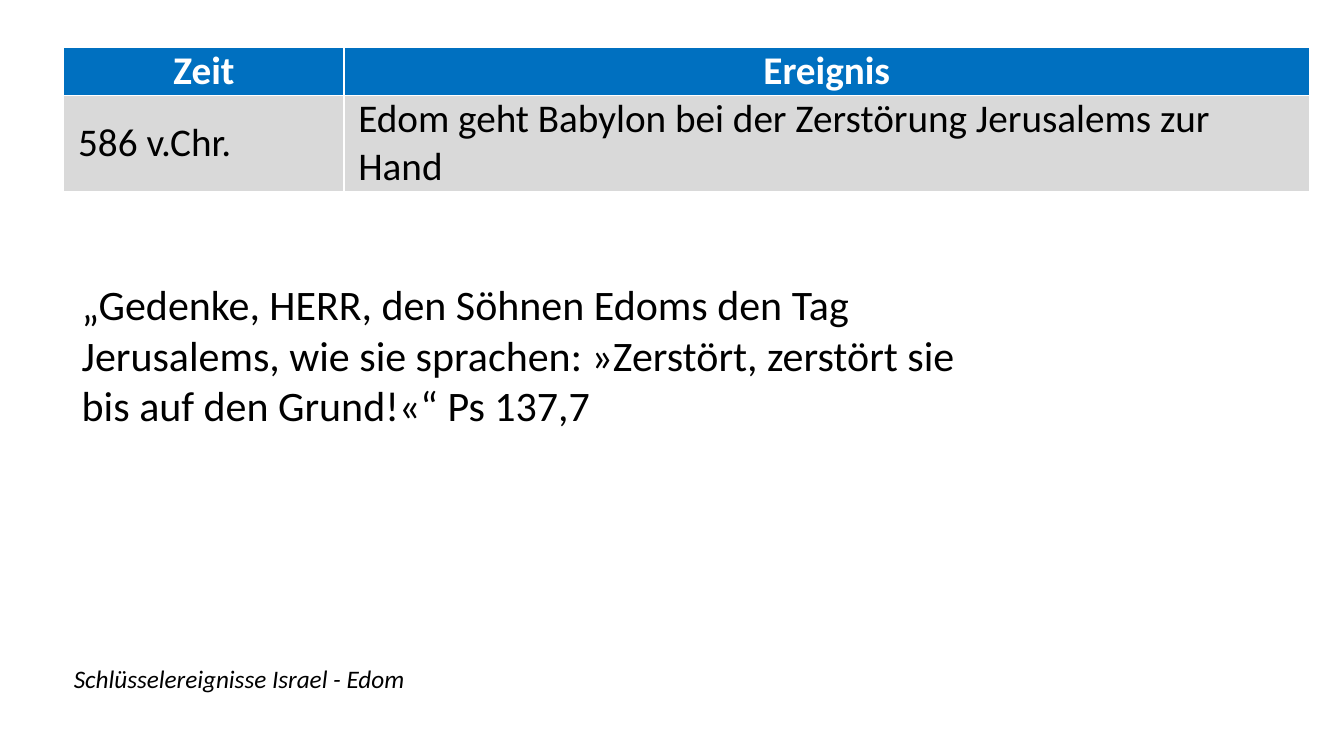
import pptx
import pptx.dml.color
import pptx.enum.text
import pptx.util

BLUE, GRAY, WHITE, BLACK = "0070C0", "D9D9D9", "FFFFFF", "000000"


def color(hex_string):
    """Turn a hex string into a colour."""
    return pptx.dml.color.RGBColor.from_string(hex_string)


class SlideBuilder:
    """Hold the style and the current slide."""

    font_name = "Calibri"

    def __init__(self, presentation):
        """Add a blank slide."""
        self.slide = presentation.slides.add_slide(presentation.slide_layouts[6])

    def set_text(self, text_frame, text, size, text_color=BLACK, bold=False, italic=False):
        """Set the text of a frame and format its runs."""
        text_frame.text = text
        for run in text_frame.paragraphs[0].runs:
            font = run.font
            font.name, font.size = self.font_name, pptx.util.Pt(size)
            font.bold, font.italic = bold, italic
            font.color.rgb = color(text_color)

    def text_box(self, left, top, width, height, text, size, wrap=True, italic=False):
        """Add a text box, measured in centimetres."""
        box = self.slide.shapes.add_textbox(*map(pptx.util.Cm, (left, top, width, height)))
        text_frame = box.text_frame
        text_frame.word_wrap = wrap
        text_frame.auto_size = pptx.enum.text.MSO_AUTO_SIZE.SHAPE_TO_FIT_TEXT
        self.set_text(text_frame, text, size, italic=italic)

    def table(self, left, top, widths, heights, rows, size):
        """Add a table with a blue header row and gray body rows."""
        bounds = map(pptx.util.Cm, (left, top, sum(widths), sum(heights)))
        table = self.slide.shapes.add_table(len(rows), len(widths), *bounds).table
        for column, width in zip(table.columns, widths):
            column.width = pptx.util.Cm(width)
        for row, height in zip(table.rows, heights):
            row.height = pptx.util.Cm(height)
        for row_index, row in enumerate(rows):
            for column_index, text in enumerate(row):
                self.cell(table.cell(row_index, column_index), text, size, row_index == 0)

    def cell(self, cell, text, size, is_header):
        """Fill and format one table cell."""
        cell.fill.solid()
        cell.fill.fore_color.rgb = color(BLUE if is_header else GRAY)
        cell.vertical_anchor = pptx.enum.text.MSO_ANCHOR.MIDDLE
        cell.margin_left = cell.margin_right = pptx.util.Cm(0.36)
        cell.margin_top = cell.margin_bottom = 0
        self.set_text(cell.text_frame, text, size, WHITE if is_header else BLACK, bold=is_header)
        if is_header:
            cell.text_frame.paragraphs[0].alignment = pptx.enum.text.PP_ALIGN.CENTER


def main():
    """Build and save the presentation."""
    presentation = pptx.Presentation()
    presentation.slide_width = pptx.util.Cm(33.87)
    presentation.slide_height = pptx.util.Cm(19.05)
    builder = SlideBuilder(presentation)
    events = [
        ("Zeit", "Ereignis"),
        ("586 v.Chr.", "Edom geht Babylon bei der Zerstörung Jerusalems zur Hand"),
    ]
    builder.table(1.61, 1.2, (7.06, 24.33), (1.09, 2.08), events, 28)
    builder.text_box(1.61, 16.6, 9.27, 1.03, "Schlüsselereignisse Israel - Edom", 18, wrap=False, italic=True)
    builder.text_box(
        1.81, 6.9, 23.7, 4.11,
        "„Gedenke, HERR, den Söhnen Edoms den Tag Jerusalems, wie sie sprachen: "
        "»Zerstört, zerstört sie bis auf den Grund!«“ Ps 137,7",
        30,
    )
    presentation.save("out.pptx")


if __name__ == "__main__":
    main()
